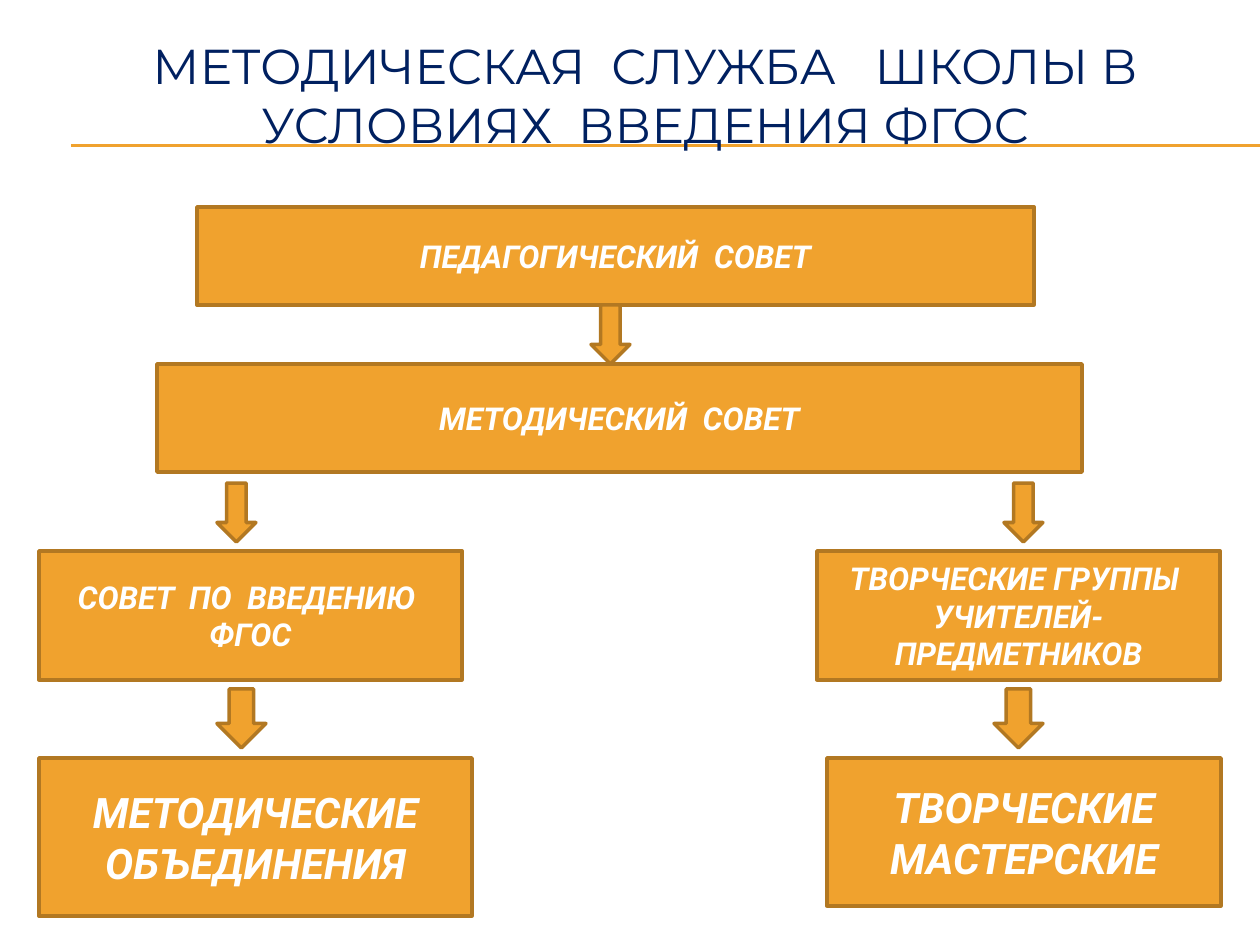
from lxml.etree import SubElement
from pptx import Presentation
from pptx.dml.color import RGBColor
from pptx.enum.shapes import MSO_CONNECTOR, MSO_SHAPE
from pptx.enum.text import MSO_ANCHOR, PP_ALIGN
from pptx.oxml.ns import qn
from pptx.util import Pt

EMU_PER_PX = 914400 / 126
COLORS = {"amber": "F0A22E", "border": "B27822", "title": "002060", "label": "FFFFFF"}
ARROW_HEIGHT = 59


def px(length):
    """Turn pixels into EMU."""
    return round(length * EMU_PER_PX)


def color(name):
    """Look up a palette colour."""
    return RGBColor.from_string(COLORS[name])


def write(frame, wording, size, typeface, ink, strong=False):
    """Put one centred run of text in a frame."""
    frame.word_wrap = True
    paragraph = frame.paragraphs[0]
    paragraph.alignment = PP_ALIGN.CENTER
    run = paragraph.add_run()
    run.text = wording
    run.font.size = Pt(size)
    run.font.name = typeface
    run.font.color.rgb = color(ink)
    run.font.bold = run.font.italic = strong


def add_rule(slide, left, right, y):
    """Draw a thin horizontal rule."""
    rule = slide.shapes.add_connector(
        MSO_CONNECTOR.STRAIGHT, px(left), px(y), px(right), px(y))
    rule.line.color.rgb = color("amber")
    rule.line.width = Pt(0.75)
    SubElement(rule._element.spPr, qn("a:effectLst"))


def add_title(slide, wording):
    """Add the slide heading."""
    heading = slide.shapes.add_textbox(px(59), px(29), px(1172), px(131))
    write(heading.text_frame, wording, 28, "Montserrat", "title")


def add_block(slide, preset, left, top, width, height):
    """Add an amber shape with a darker border."""
    block = slide.shapes.add_shape(preset, px(left), px(top), px(width), px(height))
    block.shadow.inherit = False
    block.fill.solid()
    block.fill.fore_color.rgb = color("amber")
    block.line.color.rgb = color("border")
    block.line.width = Pt(2)
    return block


def add_body(slide, wording, size, *bounds):
    """Add a labelled box for one body of the school service."""
    body = add_block(slide, MSO_SHAPE.RECTANGLE, *bounds)
    body.text_frame.vertical_anchor = MSO_ANCHOR.MIDDLE
    write(body.text_frame, wording, size, "Roboto", "label", strong=True)


def main():
    """Build the slide and save it."""
    deck = Presentation()
    deck.slide_width, deck.slide_height = px(1260), px(945)
    slide = deck.slides.add_slide(deck.slide_layouts[6])

    for y in (145, 146):
        add_rule(slide, 71, 1260, y)
    add_title(slide, "МЕТОДИЧЕСКАЯ  СЛУЖБА   ШКОЛЫ В УСЛОВИЯХ  ВВЕДЕНИЯ ФГОС")

    bodies = [
        ("ПЕДАГОГИЧЕСКИЙ  СОВЕТ", 18, 197, 207, 837, 98),
        ("МЕТОДИЧЕСКИЙ  СОВЕТ", 18, 157, 364, 925, 108),
        ("СОВЕТ  ПО  ВВЕДЕНИЮ  ФГОС", 18, 39, 551, 423, 129),
        ("ТВОРЧЕСКИЕ ГРУППЫ  УЧИТЕЛЕЙ-ПРЕДМЕТНИКОВ", 18, 817, 551, 403, 129),
        ("МЕТОДИЧЕСКИЕ ОБЪЕДИНЕНИЯ", 24, 39, 758, 433, 158),
        ("ТВОРЧЕСКИЕ МАСТЕРСКИЕ", 24, 827, 758, 394, 148),
    ]
    for body in bodies:
        add_body(slide, *body)

    arrows = [(591, 305, 39), (217, 483, 39), (217, 689, 49),
              (994, 689, 49), (1004, 483, 39)]
    for left, top, width in arrows:
        add_block(slide, MSO_SHAPE.DOWN_ARROW, left, top, width, ARROW_HEIGHT)

    deck.save("out.pptx")


if __name__ == "__main__":
    main()
